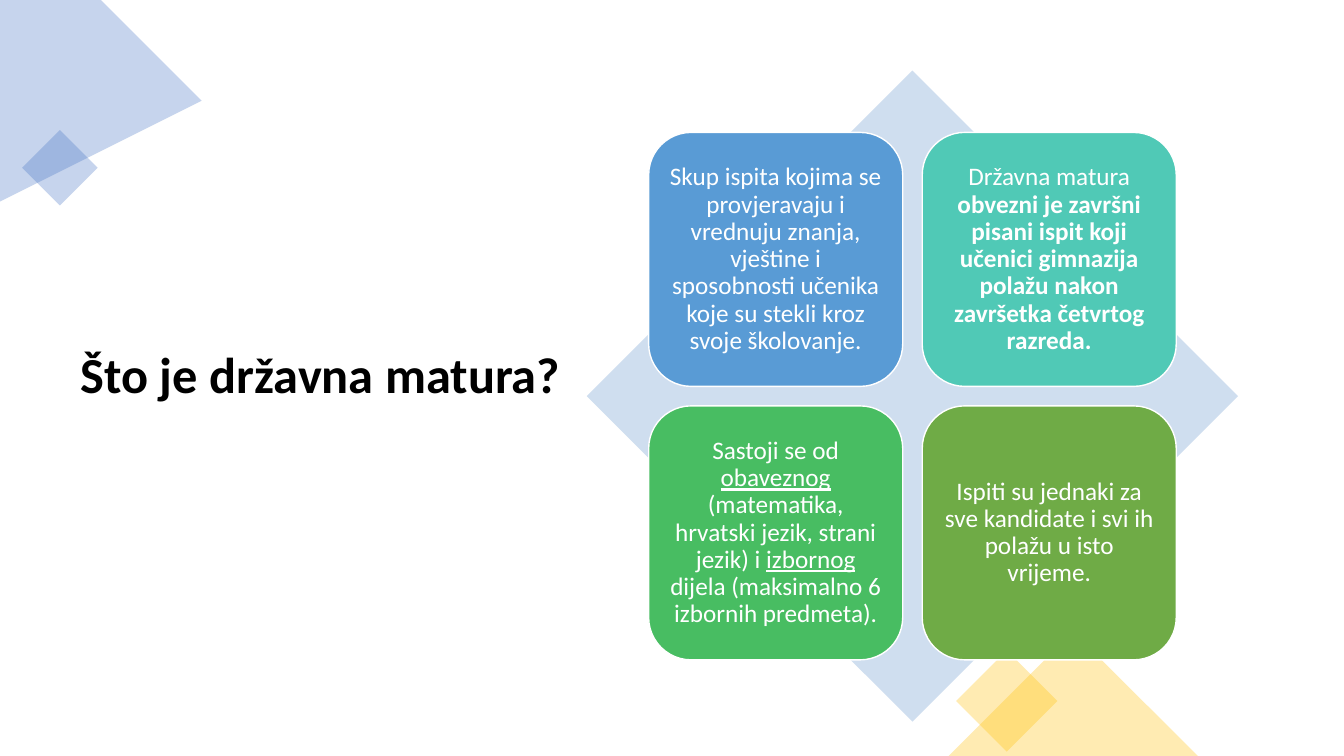
from lxml import etree
from pptx import Presentation
from pptx.dml.color import RGBColor
from pptx.enum.shapes import MSO_SHAPE
from pptx.enum.text import MSO_ANCHOR, MSO_AUTO_SIZE, PP_ALIGN
from pptx.oxml.ns import qn
from pptx.util import Inches, Pt

RECT, TRIANGLE = MSO_SHAPE.RECTANGLE, MSO_SHAPE.ISOSCELES_TRIANGLE
DIAMOND, ROUNDED = MSO_SHAPE.DIAMOND, MSO_SHAPE.ROUNDED_RECTANGLE
MIDDLE, NO_FIT = MSO_ANCHOR.MIDDLE, MSO_AUTO_SIZE.NONE
LEFT, CENTER = PP_ALIGN.LEFT, PP_ALIGN.CENTER

BLACK = RGBColor(0x00, 0x00, 0x00)
WHITE = RGBColor(0xFF, 0xFF, 0xFF)
BLUE = RGBColor(0x44, 0x72, 0xC4)
GOLD = RGBColor(0xFF, 0xC0, 0x00)
PALE = RGBColor(0xCF, 0xDE, 0xEF)
SKY = RGBColor(0x59, 0x9B, 0xD5)
TEAL = RGBColor(0x50, 0xC9, 0xB6)
GREEN = RGBColor(0x48, 0xBD, 0x62)
OLIVE = RGBColor(0x6F, 0xAB, 0x46)

FONT = "Calibri"
WIDTH, HEIGHT = 13.33, 7.5
CARD, MARGIN, STEP = 0.39, 0.095, 0.42

CARDS = [
    (SKY, [("Skup ispita kojima se provjeravaju i vrednuju znanja, vještine i "
            "sposobnosti učenika koje su stekli kroz svoje školovanje.", "")]),
    (TEAL, [("Državna matura ", ""),
            ("obvezni je završni pisani ispit koji učenici gimnazija polažu "
             "nakon završetka četvrtog razreda.", "b")]),
    (GREEN, [("Sastoji se od ", ""), ("obaveznog", "u"),
             (" (matematika, hrvatski jezik, strani jezik) i ", ""),
             ("izbornog", "u"),
             (" dijela (maksimalno 6 izbornih predmeta).", "")]),
    (OLIVE, [("Ispiti su jednaki za sve kandidate i svi ih polažu u isto vrijeme.", "")]),
]


def paint(sp, color, opacity=100):
    sp.shadow.inherit = False
    sp.fill.solid()
    sp.fill.fore_color.rgb = color
    sp.line.fill.background()
    if opacity < 100:
        clr = sp.fill._xPr.find(qn("a:solidFill"))[0]
        etree.SubElement(clr, qn("a:alpha")).set("val", str(opacity * 1000))


def add_block(slide, kind, box, color, opacity=100, rotation=0):
    sp = slide.shapes.add_shape(kind, *map(Inches, box))
    sp.rotation = rotation
    paint(sp, color, opacity)
    return sp


def write(tf, runs, size, color, align, insets):
    tf.word_wrap = True
    tf.auto_size = NO_FIT
    tf.vertical_anchor = MIDDLE
    tf.margin_left = tf.margin_right = Inches(insets[0])
    tf.margin_top = tf.margin_bottom = Inches(insets[1])
    p = tf.paragraphs[0]
    p.alignment = align
    p.line_spacing = 0.9
    for text, style in runs:
        r = p.add_run()
        r.text = text
        r.font.name = FONT
        r.font.size = Pt(size)
        r.font.color.rgb = color
        r.font.bold = "b" in style
        r.font.underline = "u" in style


def add_title(slide, box):
    sp = slide.shapes.title
    sp.left, sp.top, sp.width, sp.height = map(Inches, box)
    write(sp.text_frame, [("Što je državna matura?", "b")], 36, BLACK, LEFT, (0.1, 0.05))


def add_top_corner(slide, width, height):
    fb = slide.shapes.build_freeform(0, 0, scale=Inches(1))
    fb.add_line_segments([(width - 0.6, 0), (width, 0.59), (0.14, height), (0, height - 0.13)])
    paint(fb.convert_to_shape(), BLUE, 30)
    add_block(slide, RECT, (0.33, 1.4, 0.53, 0.53), BLUE, 30, 45)


def add_bottom_corner(slide, left, width):
    height = width / 2
    add_block(slide, RECT, (left + 0.22, 6.6, 0.71, 0.71), GOLD, 30, 45)
    add_block(slide, TRIANGLE, (left, HEIGHT - height, width, height), GOLD, 30)


def add_matrix(slide, left, top, size):
    add_block(slide, DIAMOND, (left, top, size, size), PALE)
    for i, (color, runs) in enumerate(CARDS):
        row, col = divmod(i, 2)
        x = left + size * (MARGIN + col * STEP)
        y = top + size * (MARGIN + row * STEP)
        sp = add_block(slide, ROUNDED, (x, y, size * CARD, size * CARD), color)
        sp.adjustments[0] = 0.167
        sp.line.color.rgb = WHITE
        sp.line.width = Pt(1)
        write(sp.text_frame, runs, 18, WHITE, CENTER, (0.07, 0.07))


def main():
    prs = Presentation()
    prs.slide_width, prs.slide_height = Inches(WIDTH), Inches(HEIGHT)
    slide = prs.slides.add_slide(prs.slide_layouts[5])
    add_title(slide, (0.7, 0.7, 5.25, 6.09))
    add_top_corner(slide, 1.59, 2.04)
    add_bottom_corner(slide, 9.41, 2.47)
    add_matrix(slide, 5.82, 0.7, 6.46)
    prs.save("out.pptx")


if __name__ == "__main__":
    main()
